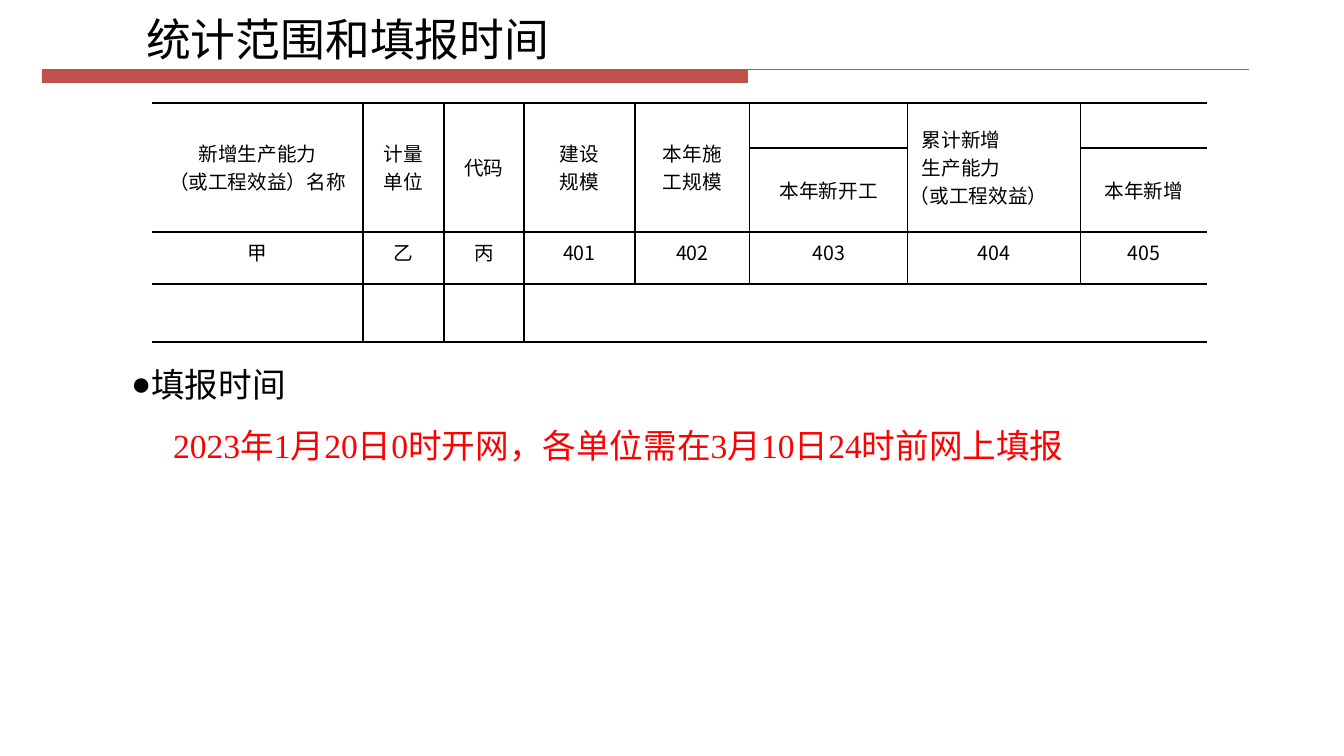
from dataclasses import dataclass

from lxml.etree import SubElement
from pptx import Presentation
from pptx.dml.color import RGBColor
from pptx.enum.shapes import MSO_CONNECTOR as Connector, MSO_SHAPE as Shape
from pptx.enum.text import MSO_ANCHOR as Anchor, MSO_AUTO_SIZE as AutoSize, PP_ALIGN as Align
from pptx.oxml.ns import qn
from pptx.util import Emu, Pt


@dataclass(frozen=True)
class Theme:
    black: str = "000000"
    red: str = "FF0000"
    accent: str = "C0504D"
    sans: str = "Noto Sans CJK SC"
    serif: str = "Times New Roman"
    title_size: int = 32
    body_size: int = 24
    table_size: int = 14


THEME = Theme()
EMU_PER_INCH = 914400
PX_PER_INCH = 100.8


def px(length):
    return Emu(round(length * EMU_PER_INCH / PX_PER_INCH))


def format_runs(paragraph, size, latin, color):
    for run in paragraph.runs:
        run.font.size = Pt(size)
        run.font.name = latin
        run.font.color.rgb = RGBColor.from_string(color)
        SubElement(run._r.get_or_add_rPr(), qn("a:ea"), typeface=THEME.sans)


presentation = Presentation()
presentation.slide_width = px(1344)
presentation.slide_height = px(756)
slide = presentation.slides.add_slide(presentation.slide_layouts[1])

accent = RGBColor.from_string(THEME.accent)
bar = slide.shapes.add_shape(Shape.RECTANGLE, px(42), px(70), px(706), px(13))
bar.shadow.inherit = False
bar.fill.solid()
bar.fill.fore_color.rgb = accent
bar.line.fill.background()
rule = slide.shapes.add_connector(Connector.STRAIGHT, px(42), px(70), px(1249), px(70))
rule.line.color.rgb = accent
rule.line.width = Pt(0.75)
SubElement(rule._element.spPr, qn("a:effectLst"))

title = slide.shapes.title
title.left, title.top, title.width, title.height = px(136), px(4), px(1055), px(67)
title.text_frame.text = "统计范围和填报时间"
title.text_frame.auto_size = AutoSize.NONE
title.text_frame.vertical_anchor = Anchor.BOTTOM
title_paragraph = title.text_frame.paragraphs[0]
title_paragraph.alignment = Align.LEFT
format_runs(title_paragraph, THEME.title_size, THEME.sans, THEME.black)

body = slide.placeholders[1]
body.left, body.top, body.width, body.height = px(121), px(339), px(1055), px(200)
body.text_frame.text = "填报时间\n2023年1月20日0时开网，各单位需在3月10日24时前网上填报"
body.text_frame.auto_size = AutoSize.NONE
heading, deadline = body.text_frame.paragraphs
for paragraph, first_indent, color in ((heading, 0, THEME.black), (deadline, 42, THEME.red)):
    paragraph.line_spacing = 1.5
    paragraph.space_before = Pt(0)
    properties = paragraph._p.get_or_add_pPr()
    properties.set("marL", "0")
    properties.set("indent", str(px(first_indent)))
    format_runs(paragraph, THEME.body_size, THEME.serif, color)
SubElement(heading._p.pPr, qn("a:buChar"), char="●")
SubElement(deadline._p.pPr, qn("a:buNone"))

COLUMN_WIDTHS = [211, 81, 80, 111, 115, 158, 173, 126]
ROW_HEIGHTS = [45, 84, 52, 58]
CELL_TEXTS = [
    ["新增生产能力\n（或工程效益）名称", "计量\n单位", "代码", "建设\n规模", "本年施\n工规模", "",
     "累计新增\n生产能力\n（或工程效益）", ""],
    ["", "", "", "", "", "本年新开工", "", "本年新增"],
    ["甲", "乙", "丙", "401", "402", "403", "404", "405"],
    [""] * 8,
]
NO_GRID_STYLE = "{2D5ABB26-0587-4C30-8999-92F81FD0307C}"
LAST_COLUMN = len(COLUMN_WIDTHS) - 1
TOTAL_COLUMN = 6
OPEN_LEFT = {(0, 5), (0, 7)}
OPEN_RIGHT = {(0, 4), (0, 6), (3, 3)}

frame = slide.shapes.add_table(
    len(ROW_HEIGHTS), len(COLUMN_WIDTHS), px(152), px(103), px(sum(COLUMN_WIDTHS)), px(sum(ROW_HEIGHTS))
)
table = frame.table
table.first_row = table.horz_banding = False
table._tbl.tblPr.find(qn("a:tableStyleId")).text = NO_GRID_STYLE
for column, width in zip(table.columns, COLUMN_WIDTHS):
    column.width = px(width)
for row, height in zip(table.rows, ROW_HEIGHTS):
    row.height = px(height)
for column_index in (0, 1, 2, 3, 4, TOTAL_COLUMN):
    table.cell(0, column_index).merge(table.cell(1, column_index))
table.cell(3, 3).merge(table.cell(3, LAST_COLUMN))

for row_index, texts in enumerate(CELL_TEXTS):
    for column_index, text in enumerate(texts):
        cell = table.cell(row_index, column_index)
        if cell.is_spanned:
            continue
        position = (row_index, column_index)
        cell.vertical_anchor = Anchor.MIDDLE
        cell.margin_left = cell.margin_right = px(2)
        cell.margin_top = cell.margin_bottom = 0

        edges = ["lnT", "lnB"]
        if column_index < LAST_COLUMN and position not in OPEN_RIGHT:
            edges.insert(0, "lnR")
        if column_index > 0 and position not in OPEN_LEFT:
            edges.insert(0, "lnL")
        cell_properties = cell._tc.get_or_add_tcPr()
        for edge in edges:
            line = SubElement(cell_properties, qn(f"a:{edge}"), w=str(Pt(1)))
            SubElement(SubElement(line, qn("a:solidFill")), qn("a:srgbClr"), val=THEME.black)
        cell.fill.background()

        if not text:
            continue
        cell.text_frame.text = text
        for paragraph in cell.text_frame.paragraphs:
            is_total = position == (0, TOTAL_COLUMN)
            paragraph.alignment = Align.JUSTIFY if is_total else Align.CENTER
            paragraph.line_spacing = Pt(12 if row_index == 2 else 20)
            if is_total and not paragraph.text.startswith("（"):
                paragraph._p.get_or_add_pPr().set("indent", str(px(12)))
            latin = THEME.sans if text.isdigit() else THEME.serif
            format_runs(paragraph, THEME.table_size, latin, THEME.black)

presentation.save("out.pptx")
